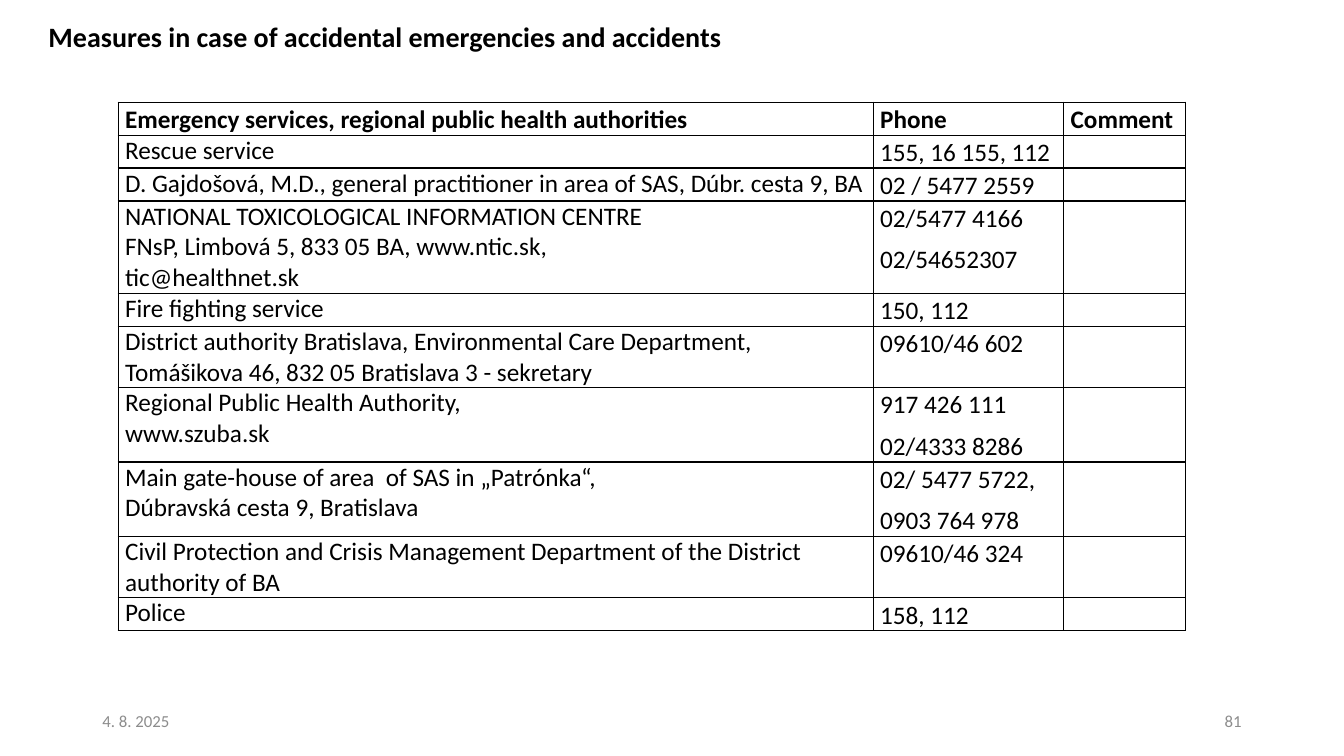
"""Build the slide with the table of emergency phone numbers."""
from lxml.etree import SubElement as Sub
from pptx import Presentation
from pptx.dml.color import RGBColor
from pptx.enum.text import MSO_ANCHOR as Anchor, MSO_AUTO_SIZE as Auto, PP_ALIGN as Align
from pptx.oxml.ns import qn
from pptx.util import Pt


def color(code):
    return RGBColor.from_string(code)


def write(frame, text, size=18, ink="000000", bold=False, align=Align.LEFT, lead=1.0, after=0):
    frame.word_wrap = True
    for i, line in enumerate(text.split("\n")):
        para = frame.add_paragraph() if i else frame.paragraphs[0]
        para.alignment = align
        para.line_spacing = lead
        para.space_before = Pt(0)
        para.space_after = Pt(after)
        run = para.add_run()
        run.text = line
        font = run.font
        font.name, font.size, font.bold = "Calibri", Pt(size), bold
        font.color.rgb = color(ink)


deck = Presentation()
deck.slide_width, deck.slide_height = Pt(960), Pt(540)
slide = deck.slides.add_slide(deck.slide_layouts[5])

title = slide.shapes.title
title.left, title.top, title.width, title.height = Pt(27.4), Pt(10), Pt(663), Pt(31.5)
title.text_frame.auto_size = Auto.NONE
title.text_frame.vertical_anchor = Anchor.TOP
write(title.text_frame, "Measures in case of accidental emergencies and accidents", size=20, bold=True)

rows = [
    (23.2, "Emergency services, regional public health authorities", "Phone", "Comment"),
    (23.2, "Rescue service", "155, 16 155, 112", ""),
    (23.2, "D. Gajdošová, M.D., general practitioner in area of SAS, Dúbr. cesta 9, BA",
     "02 / 5477 2559", ""),
    (64.8, "NATIONAL TOXICOLOGICAL INFORMATION CENTRE\n"
     "FNsP, Limbová 5, 833 05 BA, www.ntic.sk,\ntic@healthnet.sk",
     "02/5477 4166\n02/54652307", ""),
    (23.2, "Fire fighting service", "150, 112", ""),
    (43.2, "District authority Bratislava, Environmental Care Department,\n"
     "Tomášikova 46, 832 05 Bratislava 3 - sekretary", "09610/46 602", ""),
    (52.6, "Regional Public Health Authority,\nwww.szuba.sk",
     "917 426 111\n02/4333 8286", ""),
    (52.6, "Main gate-house of area  of SAS in „Patrónka“,\nDúbravská cesta 9, Bratislava",
     "02/ 5477 5722,\n0903 764 978", ""),
    (43.2, "Civil Protection and Crisis Management Department of the District authority of BA",
     "09610/46 324", ""),
    (23.2, "Police", "158, 112", ""),
]
widths = [539.3, 136.1, 87.1]
high = sum(row[0] for row in rows)
table = slide.shapes.add_table(
    len(rows), len(widths), Pt(84.4), Pt(73), Pt(sum(widths)), Pt(high)).table
table.first_row = table.horz_banding = False
for col, width in zip(table.columns, widths):
    col.width = Pt(width)

for r, (height, *texts) in enumerate(rows):
    table.rows[r].height = Pt(height)
    for c, text in enumerate(texts):
        cell = table.cell(r, c)
        cell.margin_left = cell.margin_right = Pt(5)
        cell.margin_top = cell.margin_bottom = Pt(0)
        props = cell._tc.get_or_add_tcPr()
        for side in ("a:lnL", "a:lnR", "a:lnT", "a:lnB"):
            edge = Sub(props, qn(side), w=str(Pt(1)))
            Sub(Sub(edge, qn("a:solidFill")), qn("a:srgbClr"), val="000000")
        cell.fill.background()
        if text:
            loose = r == 0 or c == 1
            write(cell.text_frame, text, bold=r == 0,
                  lead=1.07 if loose else 1.0, after=6 if loose else 0)

for left, text, align in [(66, "4. 8. 2025", Align.LEFT), (678, "81", Align.RIGHT)]:
    box = slide.shapes.add_textbox(Pt(left), Pt(500.5), Pt(216), Pt(28.75))
    box.text_frame.vertical_anchor = Anchor.MIDDLE
    write(box.text_frame, text, size=12, ink="8C8C8C", align=align)

deck.save("out.pptx")
